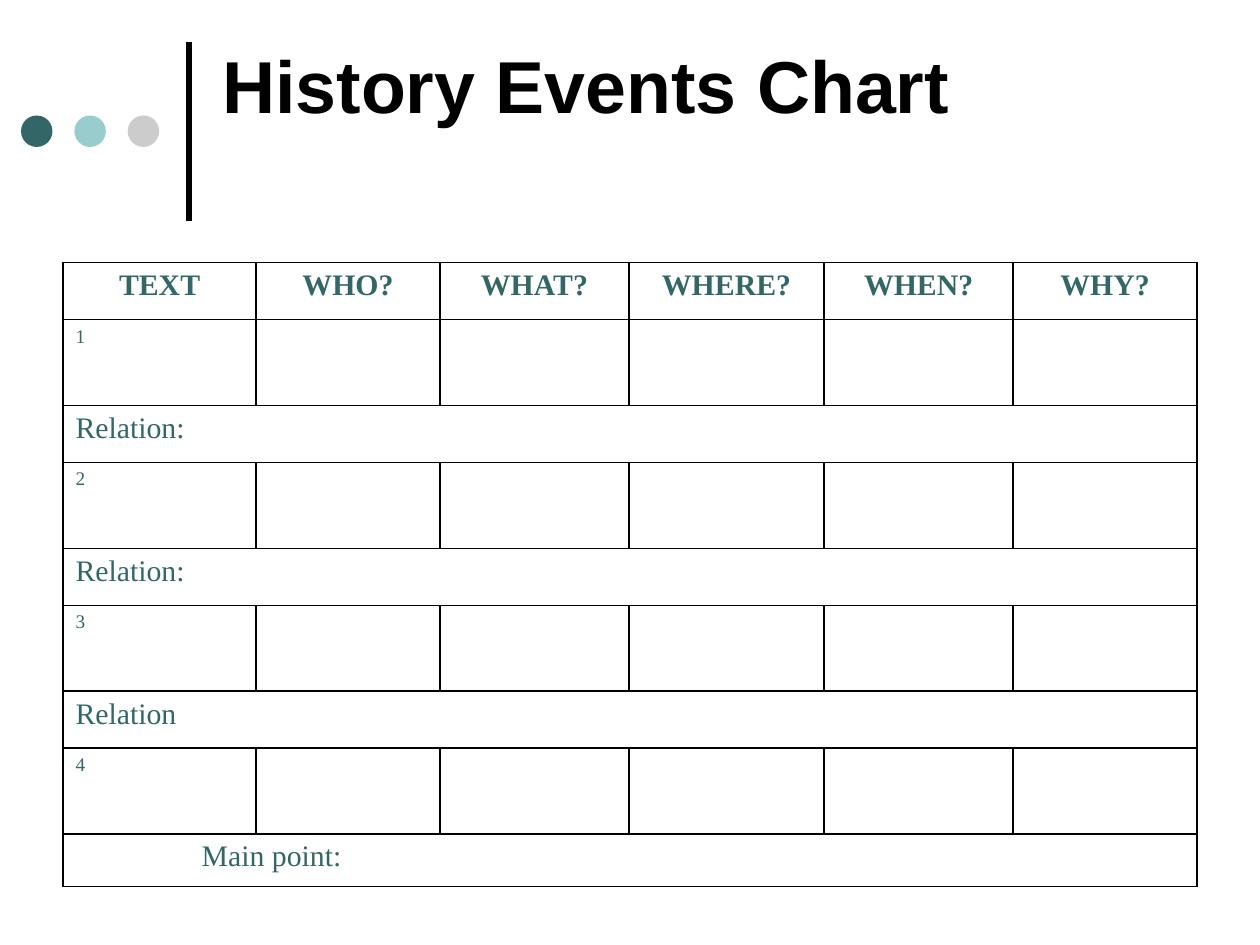
from dataclasses import dataclass

from lxml.etree import SubElement
from pptx import Presentation
from pptx.dml.color import RGBColor
from pptx.enum.shapes import MSO_CONNECTOR, MSO_SHAPE
from pptx.enum.text import MSO_ANCHOR, PP_ALIGN
from pptx.oxml import parse_xml
from pptx.oxml.ns import nsdecls, qn
from pptx.util import Inches, Pt


@dataclass(frozen=True)
class Theme:
    """Colours, fonts and type sizes of the slide."""

    ink: str = "000000"
    teal: str = "336666"
    aqua: str = "99CCCC"
    grey: str = "CCCCCC"
    sans: str = "Arial"
    serif: str = "Times New Roman"
    title: int = 42
    body: int = 17
    small: int = 11
    rule: int = 3
    edge: int = 1


class Sheet:
    """Draws elements on a slide whose grid has 120 columns and 90 rows."""

    def __init__(self, deck, theme):
        """Add a blank slide and keep the style."""
        self.theme = theme
        self.slide = deck.slides.add_slide(deck.slide_layouts[6])
        self.col = deck.slide_width / 120
        self.row = deck.slide_height / 90

    def place(self, x, y, w, h):
        """Turn grid columns and rows into lengths."""
        return [round(n) for n in (x * self.col, y * self.row, w * self.col, h * self.row)]

    def style(self, frame, font, size, color, bold=False):
        """Format every run of a text frame."""
        for para in frame.paragraphs:
            for run in para.runs:
                run.font.name = font
                run.font.size = Pt(size)
                run.font.bold = bold
                run.font.color.rgb = RGBColor.from_string(color)

    def rule(self, x, top, end):
        """Draw an upright line."""
        left, start, _, stop = self.place(x, top, 0, end)
        line = self.slide.shapes.add_connector(MSO_CONNECTOR.STRAIGHT, left, start, left, stop)
        line.line.color.rgb = RGBColor.from_string(self.theme.ink)
        line.line.width = Pt(self.theme.rule)
        SubElement(line._element.spPr, qn("a:effectLst"))

    def dot(self, x, y, size, color):
        """Draw a filled circle."""
        shape = self.slide.shapes.add_shape(MSO_SHAPE.OVAL, *self.place(x, y, size, size))
        shape.shadow.inherit = False
        shape.fill.solid()
        shape.fill.fore_color.rgb = RGBColor.from_string(color)
        shape.line.fill.background()

    def title(self, text, *box):
        """Set the heading."""
        frame = self.slide.shapes.add_textbox(*self.place(*box)).text_frame
        frame.word_wrap = True
        frame.vertical_anchor = MSO_ANCHOR.MIDDLE
        frame.text = text
        self.style(frame, self.theme.sans, self.theme.title, self.theme.ink, True)

    def edge(self, cell):
        """Clear a cell's fill and rule its four sides."""
        cell.fill.background()
        props = cell._tc.get_or_add_tcPr()
        for i, side in enumerate("LRTB"):
            props.insert(i, parse_xml(
                f'<a:ln{side} {nsdecls("a")} w="{Pt(self.theme.edge)}"><a:solidFill>'
                f'<a:srgbClr val="{self.theme.ink}"/></a:solidFill></a:ln{side}>'))

    def label(self, cell, text, size, bold=False):
        """Put styled text in a cell."""
        cell.text_frame.text = text
        self.style(cell.text_frame, self.theme.serif, size, self.theme.teal, bold)

    def table(self, x, y, cols, rows, heads, notes):
        """Draw a head row, then numbered rows each followed by a note row."""
        box = self.place(x, y, sum(cols), sum(rows))
        grid = self.slide.shapes.add_table(len(rows), len(cols), *box).table
        grid.first_row = grid.horz_banding = False
        for part, size in zip(grid.columns, cols):
            part.width = round(size * self.col)
        for part, size in zip(grid.rows, rows):
            part.height = round(size * self.row)
        for cell in grid.iter_cells():
            self.edge(cell)
        for i, head in enumerate(heads):
            cell = grid.cell(0, i)
            self.label(cell, head, self.theme.body, True)
            cell.text_frame.paragraphs[0].alignment = PP_ALIGN.CENTER
        for i, note in enumerate(notes, 1):
            self.label(grid.cell(2 * i - 1, 0), str(i), self.theme.small)
            cell = grid.cell(2 * i, 0)
            cell.merge(grid.cell(2 * i, len(cols) - 1))
            self.label(cell, note, self.theme.body)
        last = cell.text_frame.paragraphs[0]
        last._p.get_or_add_pPr().set("marL", str(round(12 * self.col)))


def main():
    """Build and save the slide."""
    deck = Presentation()
    deck.slide_width, deck.slide_height = Inches(10), Inches(7.5)
    theme = Theme()
    sheet = Sheet(deck, theme)
    sheet.rule(18, 4, 21)
    for i, color in enumerate((theme.teal, theme.aqua, theme.grey)):
        sheet.dot(2 + 5.08 * i, 11, 3, color)
    sheet.title("History Events Chart", 20, 2, 102, 12.1)
    sheet.table(
        6, 25,
        cols=[18.4, 17.5, 18, 18.6, 18, 17.5],
        rows=[5.44, 8.17] * 4 + [5],
        heads=["TEXT", "WHO?", "WHAT?", "WHERE?", "WHEN?", "WHY?"],
        notes=["Relation:", "Relation:", "Relation", "Main point:"],
    )
    deck.save("out.pptx")


if __name__ == "__main__":
    main()
